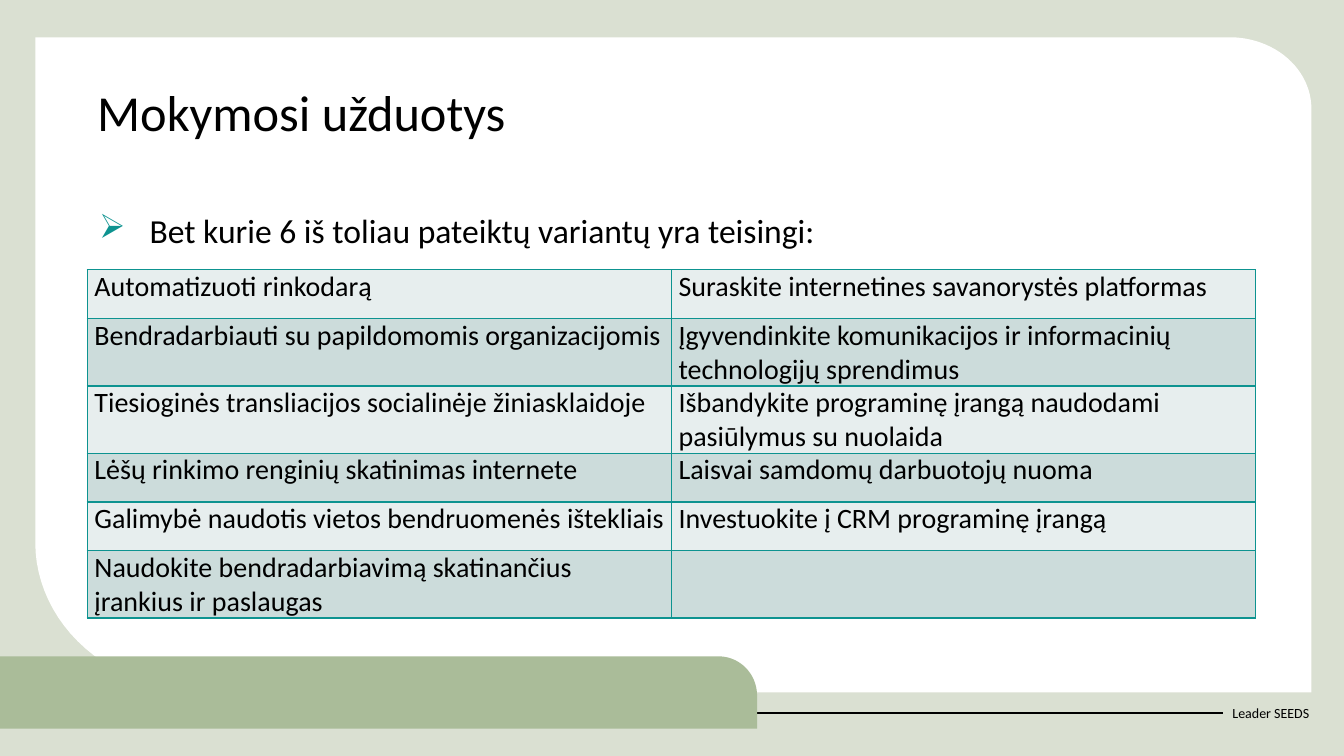
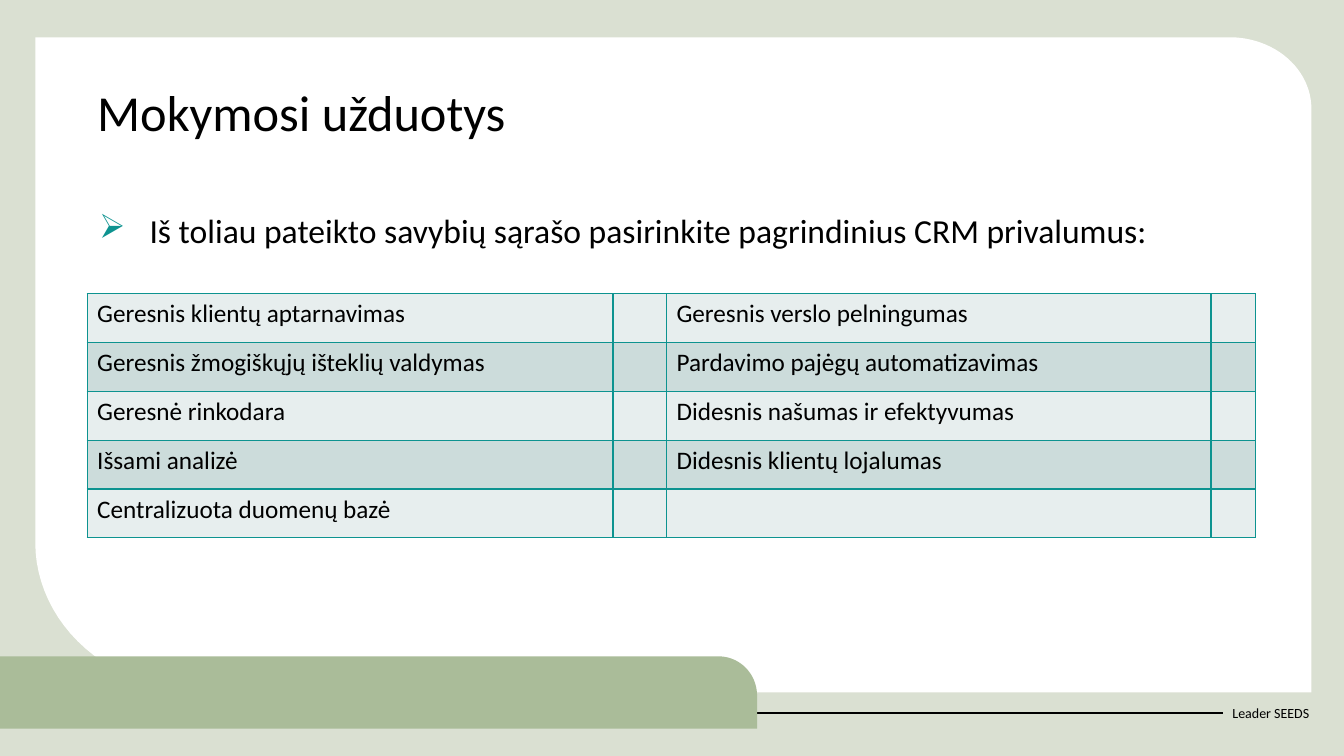
import math

from lxml import etree
from pptx import Presentation
from pptx import util as u
from pptx.dml.color import RGBColor
from pptx.enum import shapes, text
from pptx.oxml import ns

Cm = u.Cm
FONT = "Calibri"
COLORS = {
    "frame": "DAE0D2",
    "panel": "FFFFFF",
    "band": "AABC99",
    "accent": "0D9390",
    "text": "000000",
    "odd": "E7EEEE",
    "even": "CCDCDB",
}
TITLE = "Mokymosi užduotys"
FOOTER = "Leader SEEDS"
LEFT, WIDTH, ROW_HEIGHT = 2.2, 29.44, 1.23

TASKS = [
    {
        "prompt": "Bet kurie 6 iš toliau pateiktų variantų yra teisingi:",
        "top": 6.8,
        "size": 20,
        "margins": (0.18, 0),
        "columns": (14.72, 14.72),
        "rows": [
            ("Automatizuoti rinkodarą", "Suraskite internetines savanorystės platformas"),
            ("Bendradarbiauti su papildomomis organizacijomis",
             "Įgyvendinkite komunikacijos ir informacinių technologijų sprendimus"),
            ("Tiesioginės transliacijos socialinėje žiniasklaidoje",
             "Išbandykite programinę įrangą naudodami pasiūlymus su nuolaida"),
            ("Lėšų rinkimo renginių skatinimas internete", "Laisvai samdomų darbuotojų nuoma"),
            ("Galimybė naudotis vietos bendruomenės ištekliais",
             "Investuokite į CRM programinę įrangą"),
            ("Naudokite bendradarbiavimą skatinančius įrankius ir paslaugas", ""),
        ],
    },
    {
        "prompt": "Iš toliau pateikto savybių sąrašo pasirinkite pagrindinius CRM privalumus:",
        "top": 7.4,
        "size": 18,
        "margins": (0.25, 0.13),
        "columns": (13.25, 1.35, 13.72, 1.12),
        "rows": [
            ("Geresnis klientų aptarnavimas", "", "Geresnis verslo pelningumas", ""),
            ("Geresnis žmogiškųjų išteklių valdymas", "", "Pardavimo pajėgų automatizavimas", ""),
            ("Geresnė rinkodara", "", "Didesnis našumas ir efektyvumas", ""),
            ("Išsami analizė", "", "Didesnis klientų lojalumas", ""),
            ("Centralizuota duomenų bazė", "", "", ""),
        ],
    },
]


def color(name):
    return RGBColor.from_string(COLORS[name])


def add_element(parent, tag, **attributes):
    return etree.SubElement(parent, ns.qn(tag), attributes)


def write(frame, words, size, spacing=None, bullet=None):
    para = frame.paragraphs[0]
    if spacing:
        para.line_spacing = spacing
    if bullet:
        props = para._p.get_or_add_pPr()
        props.set("marL", str(Cm(1.32)))
        props.set("indent", str(Cm(-1.27)))
        tint = add_element(props, "a:buClr")
        add_element(tint, "a:srgbClr", val=COLORS["accent"])
        add_element(props, "a:buChar", char=bullet)
    para.font.size = u.Pt(size)
    if words:
        span = para.add_run()
        span.text = words
        span.font.size = u.Pt(size)
        span.font.name = FONT
        span.font.color.rgb = color("text")


def add_text(page, words, area, size, anchor=text.MSO_ANCHOR.TOP, **style):
    box = page.shapes.add_textbox(*map(Cm, area))
    box.text_frame.word_wrap = True
    box.text_frame.vertical_anchor = anchor
    write(box.text_frame, words, size, **style)
    return box


def corner(x, y, radius_x=0, radius_y=0, steps=24):
    if not radius_x:
        return [(Cm(x), Cm(y))]
    angles = [math.pi / 2 * step / steps for step in range(steps + 1)]
    return [(Cm(x - radius_x * (1 - math.sin(a))), Cm(y + radius_y * (1 - math.cos(a))))
            for a in angles]


def add_panel(page, left, top, right, bottom, fill, top_right, bottom_left=(0, 0)):
    points = (corner(left, top) + corner(right, top, *top_right) + corner(right, bottom)
              + corner(left, bottom, *(-radius for radius in bottom_left)))
    builder = page.shapes.build_freeform(*points[0])
    builder.add_line_segments(points[1:], close=True)
    panel = builder.convert_to_shape()
    panel.shadow.inherit = False
    panel.fill.solid()
    panel.fill.fore_color.rgb = color(fill)
    panel.line.fill.background()


def add_frame(page):
    page.background.fill.solid()
    page.background.fill.fore_color.rgb = color("frame")
    add_panel(page, 0.89, 0.94, 33.05, 17.45, "panel", (2.06, 1.8), (4.32, 3.78))
    footer = add_text(page, FOOTER, (30.81, 17.45, 2.57, 1.02), 10, text.MSO_ANCHOR.MIDDLE)
    rule = page.shapes.add_connector(
        shapes.MSO_CONNECTOR.STRAIGHT, 0, Cm(17.96), Cm(30.81), Cm(17.96))
    rule.end_connect(footer, 1)
    rule.line.color.rgb = color("text")
    rule.line.width = u.Pt(1.5)
    add_element(rule._element.spPr, "a:effectLst")
    add_panel(page, 0, 16.54, 19.08, 18.36, "band", (0.97, 0.99))
    add_text(page, TITLE, (LEFT, 2.1, WIDTH, 2.24), 36, spacing=0.9)


def add_borders(cell):
    props = cell._tc.get_or_add_tcPr()
    for side in ("a:lnL", "a:lnR", "a:lnT", "a:lnB"):
        border = add_element(props, side, w=str(u.Pt(1)))
        fill = add_element(border, "a:solidFill")
        add_element(fill, "a:srgbClr", val=COLORS["accent"])


def add_options(page, task):
    rows, columns = task["rows"], task["columns"]
    table = page.shapes.add_table(
        len(rows), len(columns), Cm(LEFT), Cm(task["top"]),
        Cm(WIDTH), Cm(ROW_HEIGHT * len(rows))).table
    table.first_row = table.horz_banding = False
    for column, width in zip(table.columns, columns):
        column.width = Cm(width)
    across, down = map(Cm, task["margins"])
    for r, row in enumerate(rows):
        table.rows[r].height = Cm(ROW_HEIGHT)
        for c, words in enumerate(row):
            cell = table.cell(r, c)
            cell.margin_left = cell.margin_right = across
            cell.margin_top = cell.margin_bottom = down
            add_borders(cell)
            cell.fill.solid()
            cell.fill.fore_color.rgb = color("even" if r % 2 else "odd")
            write(cell.text_frame, words, task["size"])


def main():
    deck = Presentation()
    deck.slide_width, deck.slide_height = Cm(33.87), Cm(19.05)
    for task in TASKS:
        page = deck.slides.add_slide(deck.slide_layouts[6])
        add_frame(page)
        add_text(page, task["prompt"], (LEFT, 5.28, WIDTH, 1.3), 24, spacing=0.9, bullet="➢")
        add_options(page, task)
    deck.save("out.pptx")


if __name__ == "__main__":
    main()
